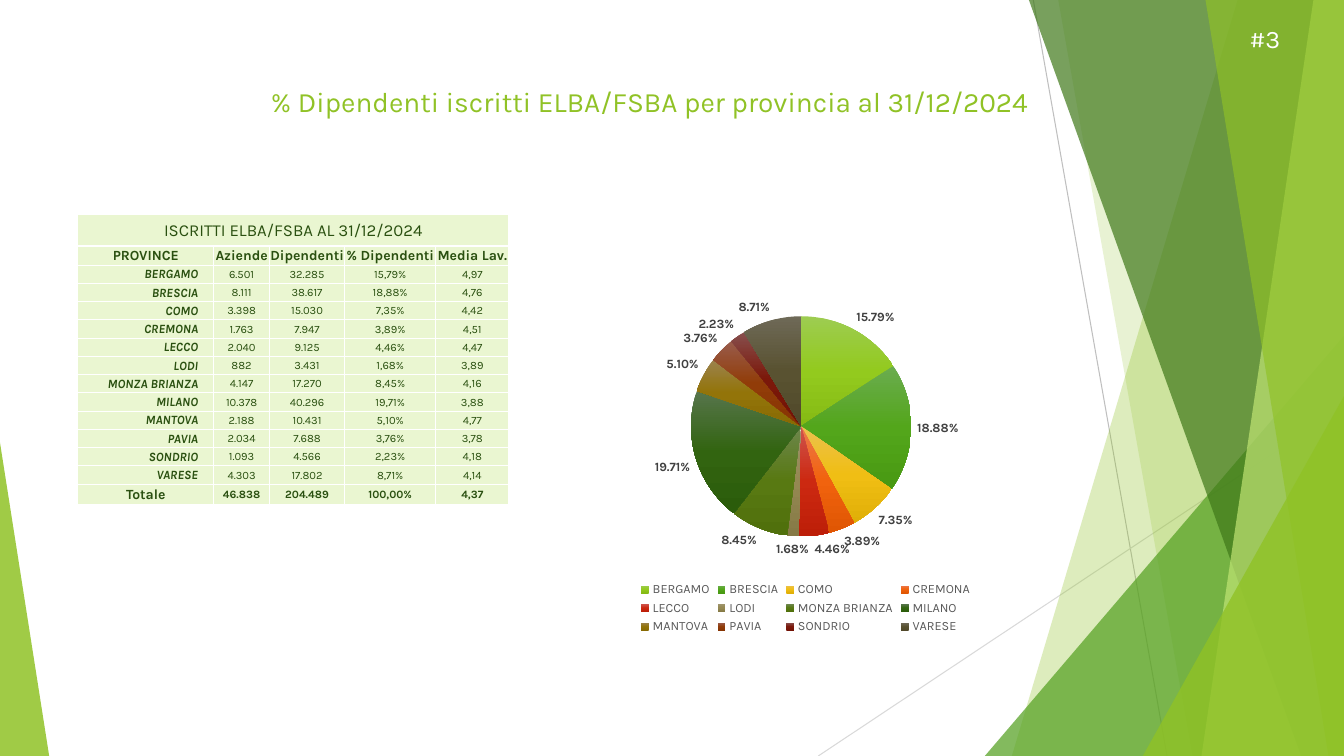
from copy import deepcopy

from lxml.etree import SubElement
from pptx import Presentation
from pptx.chart.data import CategoryChartData
from pptx.dml.color import RGBColor
from pptx.enum.chart import XL_CHART_TYPE as ChartType
from pptx.enum.chart import XL_LABEL_POSITION as LabelPosition
from pptx.enum.chart import XL_LEGEND_POSITION as LegendPosition
from pptx.enum.shapes import MSO_CONNECTOR as Connector
from pptx.enum.shapes import MSO_SHAPE as Shape
from pptx.enum.text import MSO_ANCHOR as Anchor
from pptx.enum.text import PP_ALIGN as Align
from pptx.oxml.ns import qn
from pptx.util import Cm, Pt

FONT = "Karla"
COLORS = {
    "lime": "90C226", "green": "54A021", "forest": "3F7819", "pale": "C0E474",
    "cell": "EAF6D1", "table text": "2A5010", "white": "FFFFFF",
    "line": "BFBFBF", "light line": "D9D9D9",
    "label": "404040", "legend": "595959",
}
TITLE = "% Dipendenti iscritti ELBA/FSBA per provincia al 31/12/2024"
TABLE_TITLE = "ISCRITTI ELBA/FSBA AL 31/12/2024"
HEADER = ("PROVINCE", "Aziende", "Dipendenti", "% Dipendenti", "Media Lav.")
PROVINCES = [
    ("BERGAMO", "6.501", "32.285", "15,79%", "4,97"),
    ("BRESCIA", "8.111", "38.617", "18,88%", "4,76"),
    ("COMO", "3.398", "15.030", "7,35%", "4,42"),
    ("CREMONA", "1.763", "7.947", "3,89%", "4,51"),
    ("LECCO", "2.040", "9.125", "4,46%", "4,47"),
    ("LODI", "882", "3.431", "1,68%", "3,89"),
    ("MONZA BRIANZA", "4.147", "17.270", "8,45%", "4,16"),
    ("MILANO", "10.378", "40.296", "19,71%", "3,88"),
    ("MANTOVA", "2.188", "10.431", "5,10%", "4,77"),
    ("PAVIA", "2.034", "7.688", "3,76%", "3,78"),
    ("SONDRIO", "1.093", "4.566", "2,23%", "4,18"),
    ("VARESE", "4.303", "17.802", "8,71%", "4,14"),
]
TOTAL = ("Totale", "46.838", "204.489", "100,00%", "4,37")
COLUMN_WIDTHS = (3.43, 1.4, 1.9, 2.29, 1.85)
ROW_HEIGHTS = [0.79, 0.48] + [0.46] * len(PROVINCES) + [0.51]
SLICE_GRADIENTS = [
    ("9DCC51", "93CA1E", "85BA14"), ("6BAC4F", "53A61B", "489912"),
    ("EBC14F", "F0BE14", "E0AF07"), ("EC794E", "F1630E", "E05603"),
    ("CE544D", "CC2911", "BD1E08"), ("9E946B", "948852", "867A46"),
    ("6D864D", "587912", "50700C"), ("57754C", "326410", "2B5C0B"),
    ("9B824C", "937409", "886A03"), ("995C4C", "913C08", "863402"),
    ("874E4C", "7B180A", "721205"), ("6E6957", "595231", "51492A"),
]
WIDTH, HEIGHT = 33.87, 19.05
THIN_LINES = [
    ((26.04, 0), (29.41, HEIGHT), "line"),
    ((WIDTH, 10.24), (20.62, HEIGHT), "light line"),
]
# Bands: left edge at the top and at the bottom. Triangles: left, top, width, apex.
DECORATIONS = [
    ("band", (31.19, 25.5), "lime", 30),
    ("band", (26.67, 30.05), "lime", 20),
    ("triangle", (24.82, 8.46, 9.05, 1), "green", 72),
    ("band", (25.93, 32.79), "forest", 70),
    ("band", (33.1, 30.28), "pale", 70),
    ("band", (30.38, 33.48), "lime", 65),
    ("triangle", (28.8, 9.98, 5.07, 1), "lime", 80),
    ("triangle", (0, 11.15, 1.24, 0), "lime", 85),
]


def rgb(name):
    return RGBColor.from_string(COLORS[name])


def style_font(font, size, color, bold=False, italic=False):
    font.name, font.size = FONT, Pt(size)
    font.bold, font.italic = bold, italic
    font.color.rgb = rgb(color)


def add_thin_line(slide, start, end, color):
    points = [Cm(value) for value in (*start, *end)]
    connector = slide.shapes.add_connector(Connector.STRAIGHT, *points)
    connector.line.color.rgb = rgb(color)
    connector.line.width = Pt(0.75)
    SubElement(connector._element.spPr, qn("a:effectLst"))


def add_decoration(slide, kind, geometry, color, opacity):
    if kind == "band":
        top_left, bottom_left = geometry
        builder = slide.shapes.build_freeform(Cm(top_left), 0)
        corners = [(WIDTH, 0), (WIDTH, HEIGHT), (bottom_left, HEIGHT)]
        builder.add_line_segments([(Cm(x), Cm(y)) for x, y in corners])
        shape = builder.convert_to_shape()
    else:
        left, top, width, apex = geometry
        box = [Cm(value) for value in (left, top, width, HEIGHT - top)]
        shape = slide.shapes.add_shape(Shape.ISOSCELES_TRIANGLE, *box)
        shape.adjustments[0] = apex
    shape.shadow.inherit = False
    shape.line.fill.background()
    shape.fill.solid()
    shape.fill.fore_color.rgb = rgb(color)
    color_element = shape._element.spPr.find(qn("a:solidFill"))[0]
    SubElement(color_element, qn("a:alpha"), val=str(opacity * 1000))


def add_text(slide, text, box, size, color, align):
    frame = slide.shapes.add_textbox(*[Cm(value) for value in box]).text_frame
    frame.word_wrap = True
    paragraph = frame.paragraphs[0]
    paragraph.text = text
    paragraph.alignment = align
    style_font(paragraph.font, size, color)


def add_white_borders(cell):
    properties = cell._tc.get_or_add_tcPr()
    for index, side in enumerate(("a:lnL", "a:lnR", "a:lnT", "a:lnB")):
        line = properties.makeelement(qn(side), {"w": str(Pt(1))})
        fill = SubElement(line, qn("a:solidFill"))
        SubElement(fill, qn("a:srgbClr"), val=COLORS["white"])
        properties.insert(index, line)


def fill_cell(cell, text, size, bold, italic, is_province):
    cell.fill.solid()
    cell.fill.fore_color.rgb = rgb("cell")
    add_white_borders(cell)
    cell.vertical_anchor = Anchor.MIDDLE
    cell.margin_left = cell.margin_top = Cm(0.02)
    cell.margin_right = Cm(0.4 if is_province else 0.02)
    cell.margin_bottom = 0
    paragraph = cell.text_frame.paragraphs[0]
    paragraph.text = text
    paragraph.alignment = Align.RIGHT if is_province else Align.CENTER
    style_font(paragraph.font, size, "table text", bold, italic)


def add_members_table(slide):
    rows = [(TABLE_TITLE, "", "", "", ""), HEADER, *PROVINCES, TOTAL]
    box = (1.96, 5.41, sum(COLUMN_WIDTHS), sum(ROW_HEIGHTS))
    table = slide.shapes.add_table(
        len(rows), len(HEADER), *[Cm(value) for value in box]).table
    for column, width in zip(table.columns, COLUMN_WIDTHS):
        column.width = Cm(width)
    for row, height in zip(table.rows, ROW_HEIGHTS):
        row.height = Cm(height)
    table.cell(0, 0).merge(table.cell(0, len(HEADER) - 1))
    for r, row in enumerate(rows):
        for c, text in enumerate(row):
            is_province = row in PROVINCES and c == 0
            if r == 0:
                size = 12
            elif row == HEADER or (row == TOTAL and c == 0):
                size = 10
            else:
                size = 9 if is_province else 8
            bold = is_province or row in (HEADER, TOTAL)
            fill_cell(table.cell(r, c), text, size, bold, is_province, is_province)


def fill_slice(point, colors):
    """Shade a pie slice from top to bottom with three evenly spaced colours."""
    fill = point.format.fill
    fill.gradient()
    fill.gradient_angle = 270
    stop_list = next(point.format._element.iter(qn("a:gsLst")))
    stop_list.insert(1, deepcopy(stop_list[0]))
    for index, (stop, color) in enumerate(zip(fill.gradient_stops, colors)):
        stop.position = index / 2
        stop.color.rgb = RGBColor.from_string(color)
    point.format.line.fill.background()


def add_share_chart(slide):
    data = CategoryChartData(number_format="0.00%")
    data.categories = [row[0] for row in PROVINCES]
    shares = [row[3].rstrip("%").replace(",", ".") for row in PROVINCES]
    data.add_series("% Dipendenti", [round(float(s) / 100, 4) for s in shares])
    box = [Cm(value) for value in (12.83, 7.16, 14.94, 8.92)]
    chart = slide.shapes.add_chart(ChartType.PIE, *box, data).chart
    chart.has_title = False
    chart.font.name, chart.font.size = FONT, Pt(10)
    chart.has_legend = True
    chart.legend.position = LegendPosition.BOTTOM
    chart.legend.include_in_layout = False
    style_font(chart.legend.font, 9, "legend")
    plot = chart.plots[0]
    plot.vary_by_categories = True
    plot.has_data_labels = True
    labels = plot.data_labels
    labels.show_value, labels.show_percentage = True, False
    labels.number_format, labels.number_format_is_linked = "0.00%", False
    labels.position = LabelPosition.OUTSIDE_END
    style_font(labels.font, 9, "label", bold=True)
    for index, colors in enumerate(SLICE_GRADIENTS):
        fill_slice(plot.series[0].points[index], colors)


def main():
    presentation = Presentation()
    presentation.slide_width, presentation.slide_height = Cm(WIDTH), Cm(HEIGHT)
    slide = presentation.slides.add_slide(presentation.slide_layouts[6])
    for line in THIN_LINES:
        add_thin_line(slide, *line)
    for decoration in DECORATIONS:
        add_decoration(slide, *decoration)
    add_text(slide, "#3", (31.24, 0.46, 1.78, 1.02), 18, "white", Align.LEFT)
    add_text(slide, TITLE, (5.79, 2.01, 21.18, 1.35), 20, "lime", Align.CENTER)
    add_share_chart(slide)
    add_members_table(slide)
    presentation.save("out.pptx")


if __name__ == "__main__":
    main()
